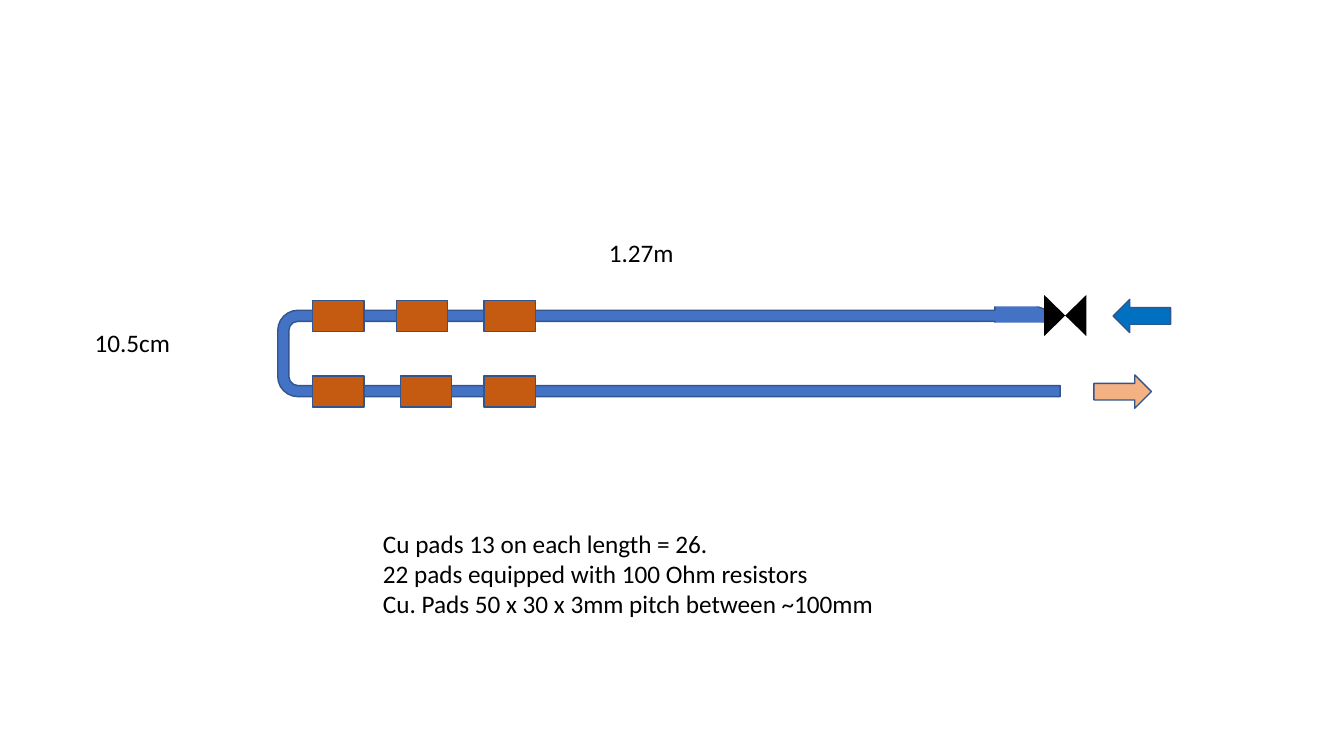
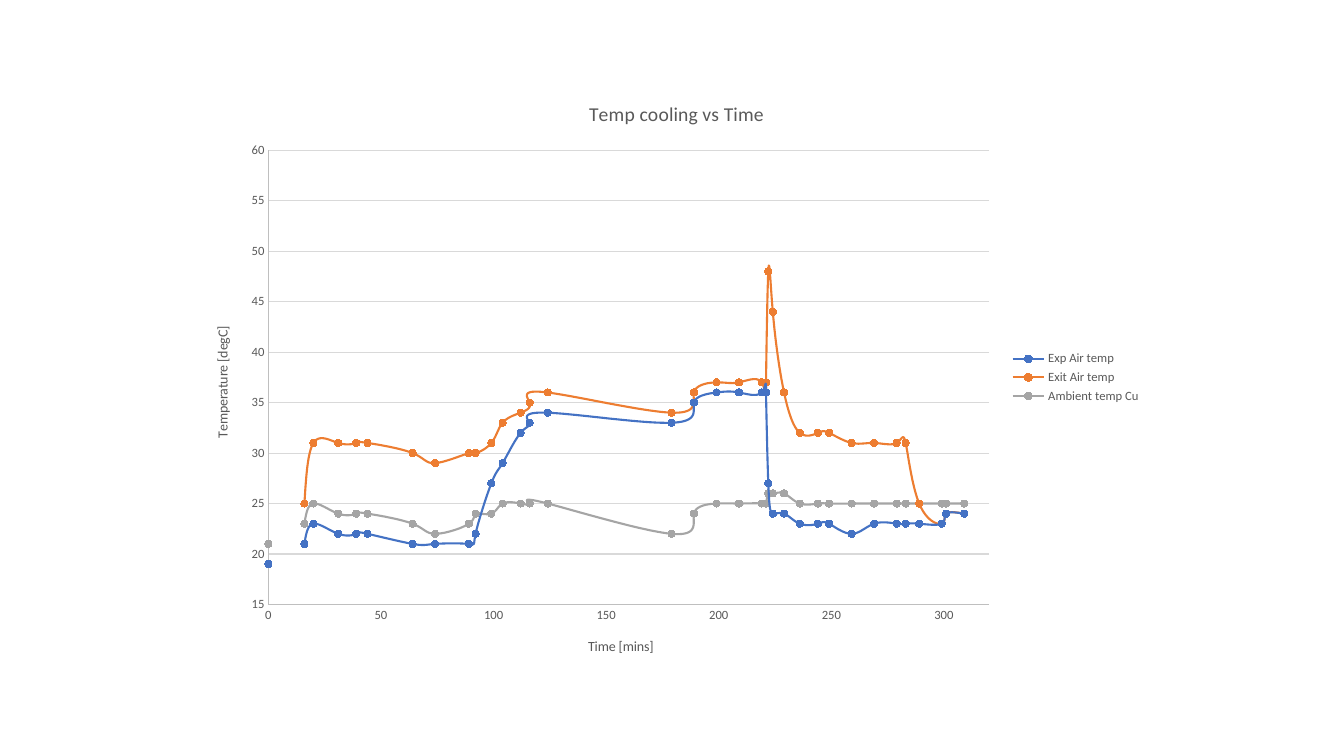
from dataclasses import dataclass

from lxml import etree
from pptx import Presentation
from pptx.chart import data as cd
from pptx.dml import color as col
from pptx.enum import chart as ce, shapes as sh, text as te
from pptx.oxml import ns
from pptx.util import Inches, Pt


def rgb(code: str) -> col.RGBColor:
    return col.RGBColor.from_string(code)


@dataclass(frozen=True)
class Theme:
    font: str = "Calibri"
    ink: str = "000000"
    white: str = "FFFFFF"
    pipe: str = "4472C4"
    edge: str = "325491"
    copper: str = "C55A11"
    cold: str = "0070C0"
    warm: str = "F4B183"
    grey: str = "595959"
    axis: str = "BFBFBF"
    grid: str = "D9D9D9"
    exit: str = "ED7D31"
    room: str = "A5A5A5"
    body: int = 18
    title: int = 14
    label: int = 10
    tick: int = 9


T = Theme()


@dataclass(frozen=True)
class Box:
    x: float
    y: float
    w: float
    h: float

    def spans(self) -> tuple:
        return tuple(Inches(v) for v in (self.x, self.y, self.w, self.h))


@dataclass(frozen=True)
class Part:
    kind: sh.MSO_SHAPE
    box: Box
    fill: str
    edge: str | None = None
    turn: int = 0
    adjust: tuple[float, ...] = ()


@dataclass(frozen=True)
class Note:
    box: Box
    lines: tuple[str, ...]


@dataclass(frozen=True)
class Curve:
    name: str
    color: str
    temps: tuple[int | None, ...]


PAD_ROWS = {2.98: (3.1, 3.93, 4.8), 3.73: (3.1, 3.97, 4.8)}
S = sh.MSO_SHAPE

PARTS = [
    Part(S.U_TURN_ARROW, Box(6.1, -0.48, 1.07, 7.76), T.pipe, T.edge, 270,
         (0.103, 0.25, 0.605, 0.188, 1)),
    Part(S.RECTANGLE, Box(9.73, 3.2, 0.95, 0.22), T.white),
    Part(S.RECTANGLE, Box(9.63, 2.59, 1.05, 0.45), T.white),
    *(Part(S.RECTANGLE, Box(x, y, 0.51, 0.31), T.copper, T.edge)
      for y, row in PAD_ROWS.items() for x in row),
    Part(S.FLOWCHART_COLLATE, Box(10.36, 2.92, 0.41, 0.42), T.ink, turn=270),
    Part(S.DOWN_ARROW, Box(10.97, 3.6, 0.33, 0.57), T.warm, T.edge, 270),
    Part(S.DOWN_ARROW, Box(11.16, 2.85, 0.33, 0.57), T.cold, T.edge, 90),
]

NOTES = [
    Note(Box(5.94, 2.31, 1.04, 0.41), ("1.27m",)),
    Note(Box(0.84, 3.2, 1.04, 0.41), ("10.5cm",)),
    Note(Box(3.7, 5.19, 5.74, 1.0), (
        "Cu pads 13 on each length = 26.",
        "22 pads equipped with 100 Ohm resistors",
        "Cu. Pads 50 x 30 x 3mm pitch between ~100mm",
    )),
]

TIMES = (0, 10, 16, 20, 31, 39, 44, 64, 74, 89, 92, 99, 104, 112, 116, 124,
         179, 189, 199, 209, 219, 221, 222, 224, 229, 236, 244, 249, 259, 269,
         279, 283, 289, 299, 301, 309)

CURVES = [
    Curve("Exp Air temp", T.pipe, (
        19, None, 21, 23, 22, 22, 22, 21, 21, 21, 22, 27, 29, 32, 33, 34, 33, 35,
        36, 36, 36, 36, 27, 24, 24, 23, 23, 23, 22, 23, 23, 23, 23, 23, 24, 24)),
    Curve("Exit Air temp", T.exit, (
        19, None, 25, 31, 31, 31, 31, 30, 29, 30, 30, 31, 33, 34, 35, 36, 34, 36,
        37, 37, 37, 37, 48, 44, 36, 32, 32, 32, 31, 31, 31, 31, 25, 23, 24, 24)),
    Curve("Ambient temp Cu", T.room, (
        21, None, 23, 25, 24, 24, 24, 23, 22, 23, 24, 24, 25, 25, 25, 25, 22, 24,
        25, 25, 25, 25, 26, 26, 26, 25, 25, 25, 25, 25, 25, 25, 25, 25, 25, 25)),
]


def style(font, size: int, color: str) -> None:
    font.name, font.size, font.bold = T.font, Pt(size), False
    font.color.rgb = rgb(color)


def stroke(line, color: str, width: float) -> None:
    line.color.rgb = rgb(color)
    line.width = Pt(width)


def draw(slide, part: Part) -> None:
    shape = slide.shapes.add_shape(part.kind, *part.box.spans())
    shape.shadow.inherit = False
    shape.rotation = part.turn
    shape.fill.solid()
    shape.fill.fore_color.rgb = rgb(part.fill)
    if part.edge:
        stroke(shape.line, part.edge, 1)
    else:
        shape.line.fill.background()
    for i, value in enumerate(part.adjust):
        shape.adjustments[i] = value


def write(slide, note: Note) -> None:
    frame = slide.shapes.add_textbox(*note.box.spans()).text_frame
    frame.word_wrap = True
    frame.auto_size = te.MSO_AUTO_SIZE.SHAPE_TO_FIT_TEXT
    frame.text = "\n".join(note.lines)
    for para in frame.paragraphs:
        style(para.font, T.body, T.ink)


def place(owner, x: float, y: float, w: float = 0, h: float = 0) -> None:
    """Fix a chart element at fractions of the chart's width and height."""
    old = owner.find(ns.qn("c:layout"))
    if old is not None:
        owner.remove(old)
    layout = etree.Element(ns.qn("c:layout"))
    manual = etree.SubElement(layout, ns.qn("c:manualLayout"))
    rules = {"xMode": "edge", "yMode": "edge", "x": x, "y": y}
    if owner.tag == ns.qn("c:plotArea"):
        rules = {"layoutTarget": "inner", **rules}
    if w:
        rules |= {"w": w, "h": h}
    for name, value in rules.items():
        etree.SubElement(manual, ns.qn(f"c:{name}")).set("val", str(value))
    after = owner.find(ns.qn("c:overlay"))
    owner.insert(0 if after is None else owner.index(after), layout)


def label(owner, text: str, size: int) -> None:
    owner.text_frame.text = text
    style(owner.text_frame.paragraphs[0].font, size, T.grey)


def scale(axis, text: str, low: int, high: int, step: int) -> None:
    axis.minimum_scale, axis.maximum_scale, axis.major_unit = low, high, step
    axis.major_tick_mark = axis.minor_tick_mark = ce.XL_TICK_MARK.NONE
    axis.tick_labels.number_format = "General"
    axis.tick_labels.number_format_is_linked = False
    style(axis.tick_labels.font, T.tick, T.grey)
    stroke(axis.format.line, T.axis, 0.75)
    label(axis.axis_title, text, T.label)


def plot(slide) -> None:
    data = cd.XyChartData()
    for curve in CURVES:
        series = data.add_series(curve.name)
        for time, temp in zip(TIMES, curve.temps):
            series.add_data_point(time, temp)
    box = Box(1.9, 0.78, 9.53, 5.93)
    chart = slide.shapes.add_chart(
        ce.XL_CHART_TYPE.XY_SCATTER_SMOOTH, *box.spans(), data).chart
    style(chart.font, T.label, T.ink)
    label(chart.chart_title, "Temp cooling vs Time", T.title)
    chart.chart_title.include_in_layout = False
    scale(chart.category_axis, "Time [mins]", 0, 320, 50)
    scale(chart.value_axis, "Temperature [degC]", 15, 60, 5)
    chart.category_axis.has_major_gridlines = False
    stroke(chart.value_axis.major_gridlines.format.line, T.grid, 0.75)

    chart.has_legend = True
    chart.legend.position = ce.XL_LEGEND_POSITION.RIGHT
    chart.legend.include_in_layout = False
    style(chart.legend.font, T.tick, T.grey)

    chart.plots[0].vary_by_categories = False
    for curve, series in zip(CURVES, chart.plots[0].series):
        stroke(series.format.line, curve.color, 1.5)
        mark = series.marker
        mark.style, mark.size = ce.XL_MARKER_STYLE.CIRCLE, 5
        mark.format.fill.solid()
        mark.format.fill.fore_color.rgb = rgb(curve.color)
        stroke(mark.format.line, curve.color, 0.75)

    root = chart.element
    for smooth in root.iter(ns.qn("c:smooth")):
        smooth.set("val", "1")
    for point in list(root.iter(ns.qn("c:pt"))):
        if point.findtext(ns.qn("c:v")) == "None":
            point.getparent().remove(point)
    titles = list(root.iter(ns.qn("c:title")))
    for title, spot in zip(titles, ((0.41, 0.03), (0.41, 0.93), (0.02, 0.41))):
        place(title, *spot)
    next(titles[-1].iter(ns.qn("a:bodyPr"))).set("rot", "-5400000")
    place(next(root.iter(ns.qn("c:plotArea"))), 0.08, 0.12, 0.75, 0.76)
    place(next(root.iter(ns.qn("c:legend"))), 0.85, 0.45, 0.14, 0.1)


def main() -> None:
    deck = Presentation()
    deck.slide_width, deck.slide_height = Inches(13.33), Inches(7.5)
    blank = deck.slide_layouts[6]
    scheme = deck.slides.add_slide(blank)
    for part in PARTS:
        draw(scheme, part)
    for note in NOTES:
        write(scheme, note)
    plot(deck.slides.add_slide(blank))
    deck.save("out.pptx")


if __name__ == "__main__":
    main()
